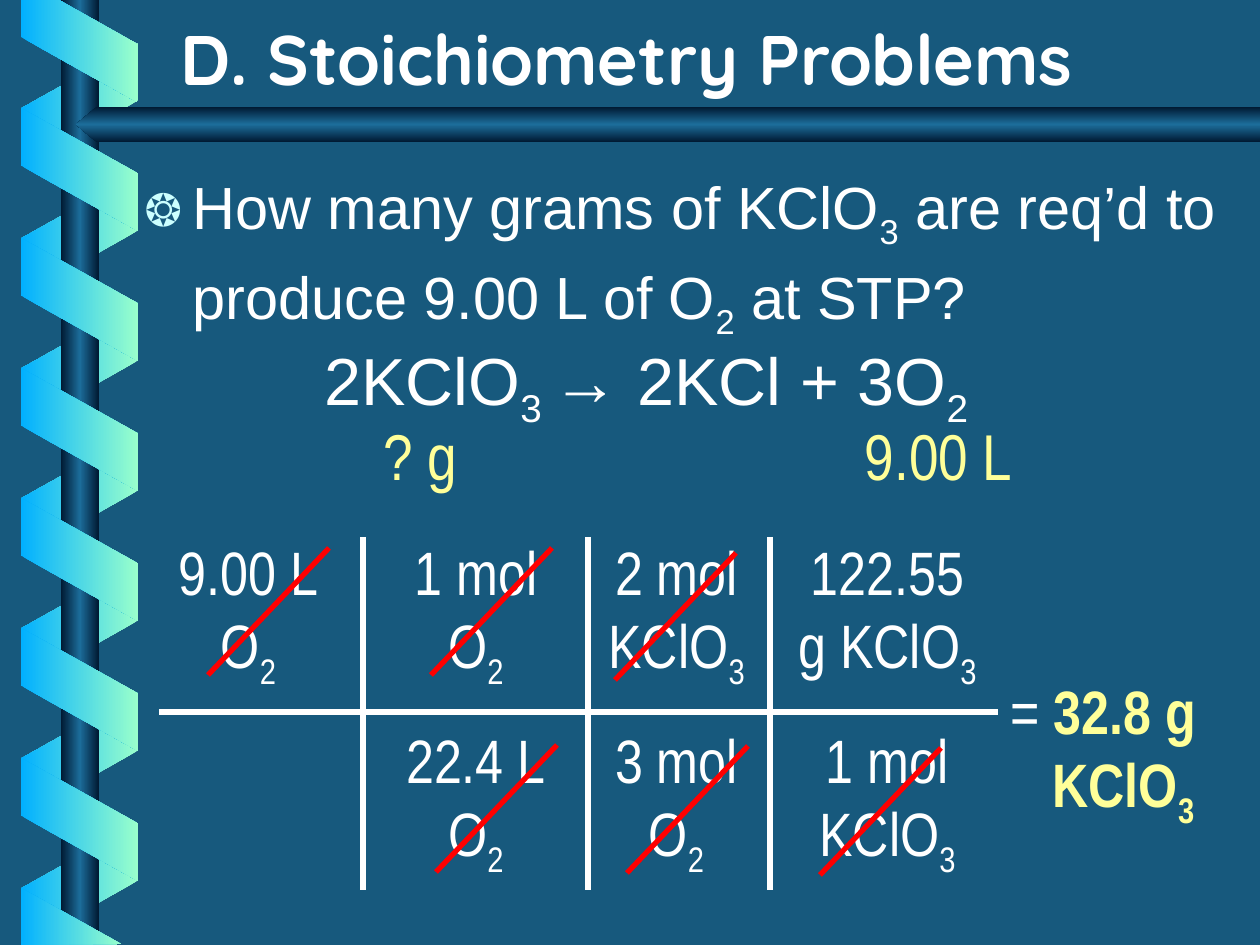
import dataclasses

import pptx
import pptx.dml.color
import pptx.enum.shapes
import pptx.enum.text
import pptx.oxml
import pptx.oxml.ns
import pptx.util

EMU_PER_PX = 914400 / 126
ALIGN = pptx.enum.text.PP_ALIGN
SHAPES = pptx.enum.shapes.MSO_SHAPE


@dataclasses.dataclass(frozen=True)
class Theme:
    """Colours, fonts and type sizes of the slide."""
    background: str = "17597D"
    text: str = "FFFFFF"
    accent: str = "FFFF99"
    bullet: str = "CCFFFF"
    cancel: str = "FF0000"
    shadow: str = "001932"
    ribbon: tuple = ("01B0FF", "99FFCC")
    bar: tuple = ("001932", "1C6D9A", "001932")
    heading_font: str = "Quicksand"
    body_font: str = "Arial"
    narrow_font: str = "Arial Narrow"
    title_size: int = 40
    question_size: int = 34
    equation_size: int = 38
    label_size: int = 37
    cell_size: int = 35
    rule_width: int = 3


THEME = Theme()


def px(value):
    """Turn pixels into EMU."""
    return pptx.util.Emu(round(value * EMU_PER_PX))


def rgb(value):
    """Turn a hex string into a colour."""
    return pptx.dml.color.RGBColor.from_string(value)


def xml(body):
    """Parse one DrawingML element."""
    tag, rest = body[1:].split(" ", 1)
    return pptx.oxml.parse_xml(f"<{tag} {pptx.oxml.ns.nsdecls('a')} {rest}")


def apply(target, values):
    """Set each named attribute on an object."""
    for name, value in values.items():
        setattr(target, name, value)


def place(shape, left, top, width, height):
    """Move and size a shape."""
    apply(shape, dict(left=px(left), top=px(top), width=px(width), height=px(height)))


def paint_gradient(shape, colors, angle=0):
    """Give a shape an evenly spaced gradient and no outline."""
    shape.shadow.inherit = False
    shape.line.fill.background()
    shape.fill.background()
    stops = "".join(
        f'<a:gs pos="{100000 * index // (len(colors) - 1)}"><a:srgbClr val="{color}"/></a:gs>'
        for index, color in enumerate(colors))
    gradient = xml(f'<a:gradFill rotWithShape="0"><a:gsLst>{stops}</a:gsLst>'
                   f'<a:lin ang="{angle * 60000}" scaled="0"/></a:gradFill>')
    properties = shape._element.spPr
    properties.replace(properties.find(pptx.oxml.ns.qn("a:noFill")), gradient)


def add_preset(slide, kind, box, colors, angle=0, rotation=0, flip=False, adjust=None):
    """Add a gradient-filled preset shape."""
    shape = slide.shapes.add_shape(kind, *map(px, box))
    shape.rotation = rotation
    if adjust is not None:
        shape.adjustments[0] = adjust
    if flip:
        shape._element.spPr.xfrm.set("flipH", "1")
    paint_gradient(shape, colors, angle)


def add_outline(slide, points):
    """Add a cut-off ribbon turn."""
    builder = slide.shapes.build_freeform(*points[0], scale=EMU_PER_PX)
    builder.add_line_segments(points[1:], close=True)
    paint_gradient(builder.convert_to_shape(), THEME.ribbon)


def add_line(slide, start, end, color):
    """Add a straight line."""
    line = slide.shapes.add_connector(
        pptx.enum.shapes.MSO_CONNECTOR.STRAIGHT, *map(px, start + end))
    line.line.color.rgb = rgb(color)
    line.line.width = pptx.util.Pt(THEME.rule_width)
    line._element.spPr.append(xml("<a:effectLst />"))


def write(paragraph, text, font, size, color=THEME.text, bold=False):
    """Write text whose parts between underscores are subscripts."""
    for index, part in enumerate(text.split("_")):
        if part:
            run = paragraph.add_run()
            run.text = part
            apply(run.font, dict(name=font, size=pptx.util.Pt(size), bold=bold))
            run.font.color.rgb = rgb(color)
            if index % 2:
                run._r.get_or_add_rPr().set("baseline", "-25000")


def add_text(slide, box, lines, font, size, color=THEME.text, spacing=None, gap_before=None):
    """Add a centred text box, with a wider gap before one line if asked."""
    frame = slide.shapes.add_textbox(*map(px, box)).text_frame
    frame.word_wrap = True
    for index, line in enumerate(lines):
        paragraph = frame.add_paragraph() if index else frame.paragraphs[0]
        apply(paragraph, dict(alignment=ALIGN.CENTER, line_spacing=spacing))
        if index == gap_before:
            paragraph.space_before = pptx.util.Pt(THEME.cell_size / 2)
        write(paragraph, line, font, size, color)


def add_decoration(slide):
    """Draw the ribbon wound round the pole, and the bar under the title."""
    for turn in range(7):
        add_preset(slide, SHAPES.PARALLELOGRAM, (18, 46 + 130 * turn, 123, 117),
                   THEME.ribbon[::-1], rotation=90, flip=True, adjust=0.56)
    add_preset(slide, SHAPES.RECTANGLE, (61, 0, 38, 945), THEME.bar)
    for turn in range(6):
        add_preset(slide, SHAPES.PARALLELOGRAM, (18, 111 + 130 * turn, 123, 117),
                   THEME.ribbon, rotation=270, adjust=0.56)
    add_outline(slide, [(21, 0), (21, 37), (137, 102), (137, 44), (59, 0)])
    add_outline(slide, [(121, 944), (21, 888), (21, 945)])
    add_preset(slide, SHAPES.PENTAGON, (76, 107, 1184, 35), THEME.bar,
               angle=90, flip=True, adjust=0.59)


def fill_title(title):
    """Write the slide title with its hard shadow."""
    place(title, 168, 0, 1071, 106)
    frame = title.text_frame
    apply(frame, dict(vertical_anchor=pptx.enum.text.MSO_ANCHOR.BOTTOM,
                      auto_size=pptx.enum.text.MSO_AUTO_SIZE.NONE))
    paragraph = frame.paragraphs[0]
    paragraph.alignment = ALIGN.LEFT
    write(paragraph, "D. Stoichiometry Problems", THEME.heading_font, THEME.title_size, bold=True)
    fill = paragraph.runs[0]._r.rPr.find(pptx.oxml.ns.qn("a:solidFill"))
    fill.addnext(xml('<a:effectLst ><a:outerShdw dist="38100" dir="2700000">'
                     f'<a:srgbClr val="{THEME.shadow}"/></a:outerShdw></a:effectLst>'))


def fill_question(body):
    """Write the bulleted question."""
    place(body, 132, 156, 1128, 197)
    body.text_frame.auto_size = pptx.enum.text.MSO_AUTO_SIZE.NONE
    paragraph = body.text_frame.paragraphs[0]
    apply(paragraph, dict(line_spacing=1.1, space_before=pptx.util.Pt(0)))
    write(paragraph, "How many grams of KClO_3_ are req’d to produce 9.00 L of O_2_ at STP?",
          THEME.body_font, THEME.question_size)
    properties = paragraph._p.get_or_add_pPr()
    properties.set("marL", str(px(48)))
    properties.set("indent", str(-px(48)))
    for bullet in (f'<a:buClr ><a:srgbClr val="{THEME.bullet}"/></a:buClr>',
                   '<a:buSzPct val="75000"/>', '<a:buChar char="❂"/>'):
        properties.append(xml(bullet))


def add_answer(slide):
    """Write the result, its second line aligned under the number."""
    frame = slide.shapes.add_textbox(*map(px, (998, 667, 262, 207))).text_frame
    frame.word_wrap = True
    style = dict(font=THEME.narrow_font, size=THEME.cell_size)
    write(frame.paragraphs[0], "= ", **style)
    write(frame.paragraphs[0], "32.8 g", color=THEME.accent, bold=True, **style)
    unit = frame.add_paragraph()
    unit._p.get_or_add_pPr().set("marL", str(px(42)))
    write(unit, "KClO_3", color=THEME.accent, bold=True, **style)


def add_conversion(slide):
    """Lay out the conversion grid and strike the units that cancel."""
    columns = [(130, 237, ["9.00 L", "O_2"]),
               (359, 234, ["1 mol", "O_2", "22.4 L", "O_2"]),
               (578, 197, ["2 mol", "KClO_3", "3 mol", "O_2"]),
               (764, 247, ["122.55", "g KClO_3", "1 mol", "KClO_3"])]
    for left, width, lines in columns:
        add_text(slide, (left, 528, width, 370), lines, THEME.narrow_font, THEME.cell_size,
                 gap_before=2)
    add_line(slide, (159, 712), (998, 712), THEME.text)
    for x in (363, 588, 770):
        add_line(slide, (x, 537), (x, 890), THEME.text)
    for x, y in ((329, 548), (552, 548), (736, 553), (557, 745), (748, 746), (941, 748)):
        add_line(slide, (x, y), (x - 121, y + 127), THEME.cancel)


def main():
    """Build and save the slide."""
    presentation = pptx.Presentation()
    apply(presentation, dict(slide_width=px(1260), slide_height=px(945)))
    slide = presentation.slides.add_slide(presentation.slide_layouts[1])
    slide.background.fill.solid()
    slide.background.fill.fore_color.rgb = rgb(THEME.background)
    add_decoration(slide)
    fill_title(slide.shapes.title)
    fill_question(slide.placeholders[1])
    add_text(slide, (137, 324, 1029, 113), ["2KClO_3 _→ 2KCl + 3O_2 _"],
             THEME.body_font, THEME.equation_size, spacing=1.1)
    for left, width, label in ((294, 252, "? g"), (779, 319, "9.00 L")):
        add_text(slide, (left, 410, width, 98), [label], THEME.narrow_font, THEME.label_size,
                 THEME.accent)
    add_conversion(slide)
    add_answer(slide)
    presentation.save("out.pptx")


if __name__ == "__main__":
    main()
